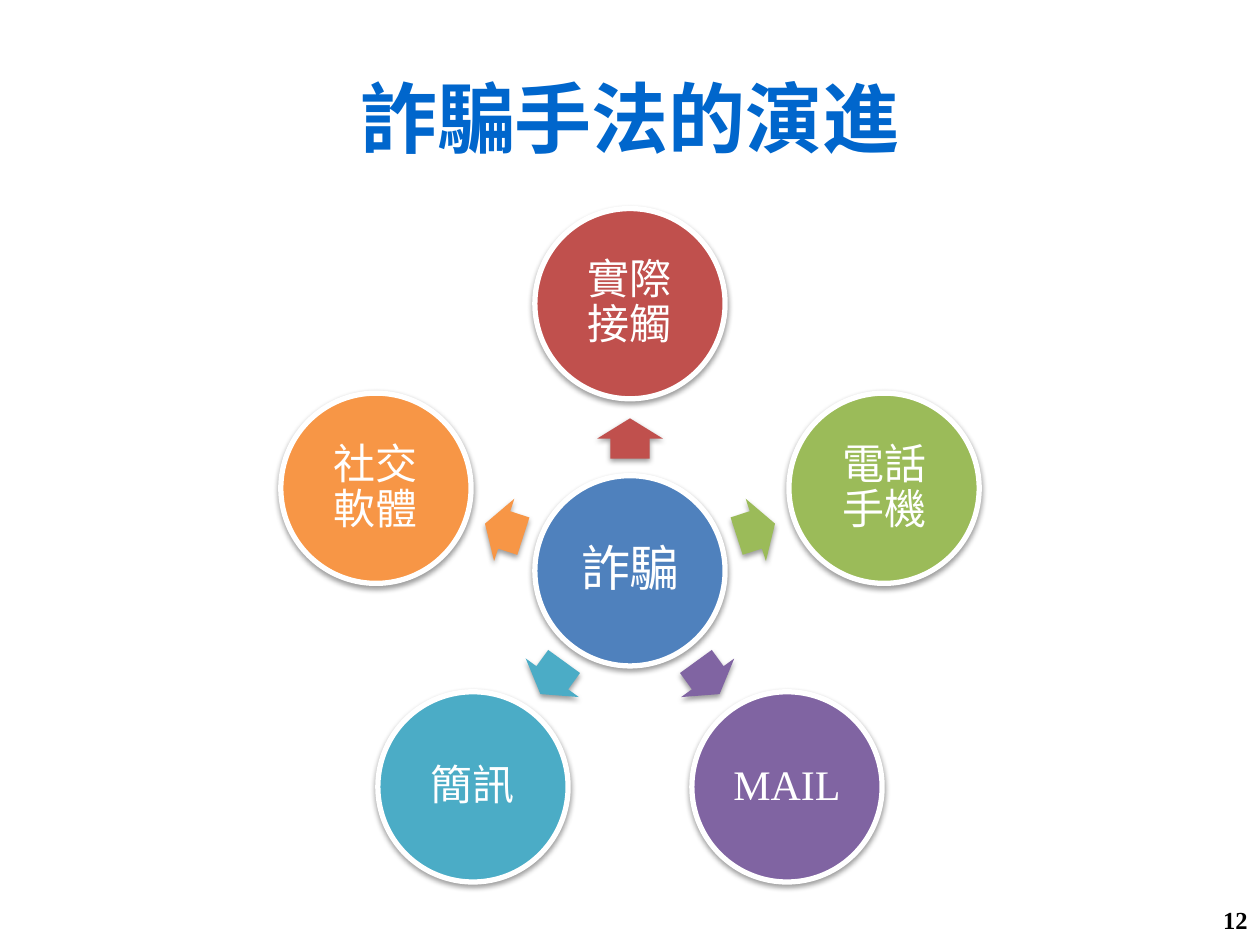
from dataclasses import dataclass
from math import cos, radians, sin

from lxml import etree
from pptx import Presentation
from pptx.dml.color import RGBColor
from pptx.enum.shapes import MSO_SHAPE as Shape
from pptx.enum.text import MSO_ANCHOR as Anchor, PP_ALIGN as Align
from pptx.oxml.ns import qn
from pptx.util import Inches, Pt


@dataclass(frozen=True)
class Theme:
    font: str = "Times New Roman"
    title: str = "0066CC"
    ink: str = "000000"
    white: str = "FFFFFF"
    hub: str = "4F81BD"
    title_size: int = 44
    hub_size: int = 28
    node_size: int = 24
    number_size: int = 14


CENTER_X, CENTER_Y = 5, 4.53
RING_RADIUS, ARROW_RADIUS = 2.12, 1.05
DIAMETER = 1.51
ARROW_LENGTH, ARROW_WIDTH = 0.32, 0.52
METHODS = [
    ("實際 接觸", "C0504D"),
    ("電話 手機", "9BBB59"),
    ("MAIL", "8064A2"),
    ("簡訊", "4BACC6"),
    ("社交 軟體", "F79646"),
]


def write_text(frame, text, *, font, size, color, bold=False, align=Align.CENTER,
               inset=None, line_spacing=None):
    frame.word_wrap = True
    frame.vertical_anchor = Anchor.MIDDLE
    if inset is not None:
        frame.margin_left = frame.margin_right = Inches(inset)
        frame.margin_top = frame.margin_bottom = Inches(inset)
    para = frame.paragraphs[0]
    para.alignment = align
    para.line_spacing = line_spacing
    span = para.add_run()
    span.text = text
    span.font.name = font
    span.font.size = Pt(size)
    span.font.bold = bold
    span.font.color.rgb = RGBColor.from_string(color)


def add_soft_shadow(shape):
    shape.shadow.inherit = False
    effects = shape.element.spPr.find(qn("a:effectLst"))
    shadow = etree.SubElement(effects, qn("a:outerShdw"), blurRad=str(Pt(3.1)),
                              dist=str(Pt(1.6)), dir="5400000", rotWithShape="0")
    color = etree.SubElement(shadow, qn("a:srgbClr"), val="000000")
    etree.SubElement(color, qn("a:alpha"), val="38000")


def point_on_ring(radius, angle):
    return (CENTER_X + radius * cos(radians(angle)),
            CENTER_Y + radius * sin(radians(angle)))


class Painter:
    def __init__(self, page, theme):
        self.page = page
        self.theme = theme

    def label(self, left, top, width, height, text, **style):
        box = self.page.shapes.add_textbox(Inches(left), Inches(top),
                                           Inches(width), Inches(height))
        write_text(box.text_frame, text, font=self.theme.font, **style)

    def centered_shape(self, kind, x, y, width, height, color):
        shape = self.page.shapes.add_shape(
            kind, Inches(x - width / 2), Inches(y - height / 2),
            Inches(width), Inches(height))
        shape.fill.solid()
        shape.fill.fore_color.rgb = RGBColor.from_string(color)
        add_soft_shadow(shape)
        return shape

    def circle(self, x, y, text, color, size):
        shape = self.centered_shape(Shape.OVAL, x, y, DIAMETER, DIAMETER, color)
        shape.line.color.rgb = RGBColor.from_string(self.theme.white)
        shape.line.width = Pt(3)
        write_text(shape.text_frame, text, font=self.theme.font, size=size,
                   color=self.theme.white, inset=0.03, line_spacing=0.9)

    def arrow(self, x, y, angle, color):
        shape = self.centered_shape(Shape.RIGHT_ARROW, x, y,
                                    ARROW_LENGTH, ARROW_WIDTH, color)
        shape.line.fill.background()
        shape.adjustments[0] = 0.6
        shape.adjustments[1] = 0.5
        shape.rotation = angle % 360


def main():
    deck = Presentation()
    deck.slide_width, deck.slide_height = Inches(10), Inches(7.5)
    theme = Theme()
    painter = Painter(deck.slides.add_slide(deck.slide_layouts[6]), theme)

    painter.label(0.5, 0.3, 9, 1.25, "詐騙手法的演進",
                  size=theme.title_size, color=theme.title, bold=True)
    painter.label(7.67, 7.1, 2.33, 0.4, "12", size=theme.number_size,
                  color=theme.ink, bold=True, align=Align.RIGHT)

    painter.circle(CENTER_X, CENTER_Y, "詐騙", theme.hub, theme.hub_size)
    for index, (text, color) in enumerate(METHODS):
        angle = -90 + index * 360 / len(METHODS)
        painter.arrow(*point_on_ring(ARROW_RADIUS, angle), angle, color)
        painter.circle(*point_on_ring(RING_RADIUS, angle), text, color, theme.node_size)

    deck.save("out.pptx")


if __name__ == "__main__":
    main()
